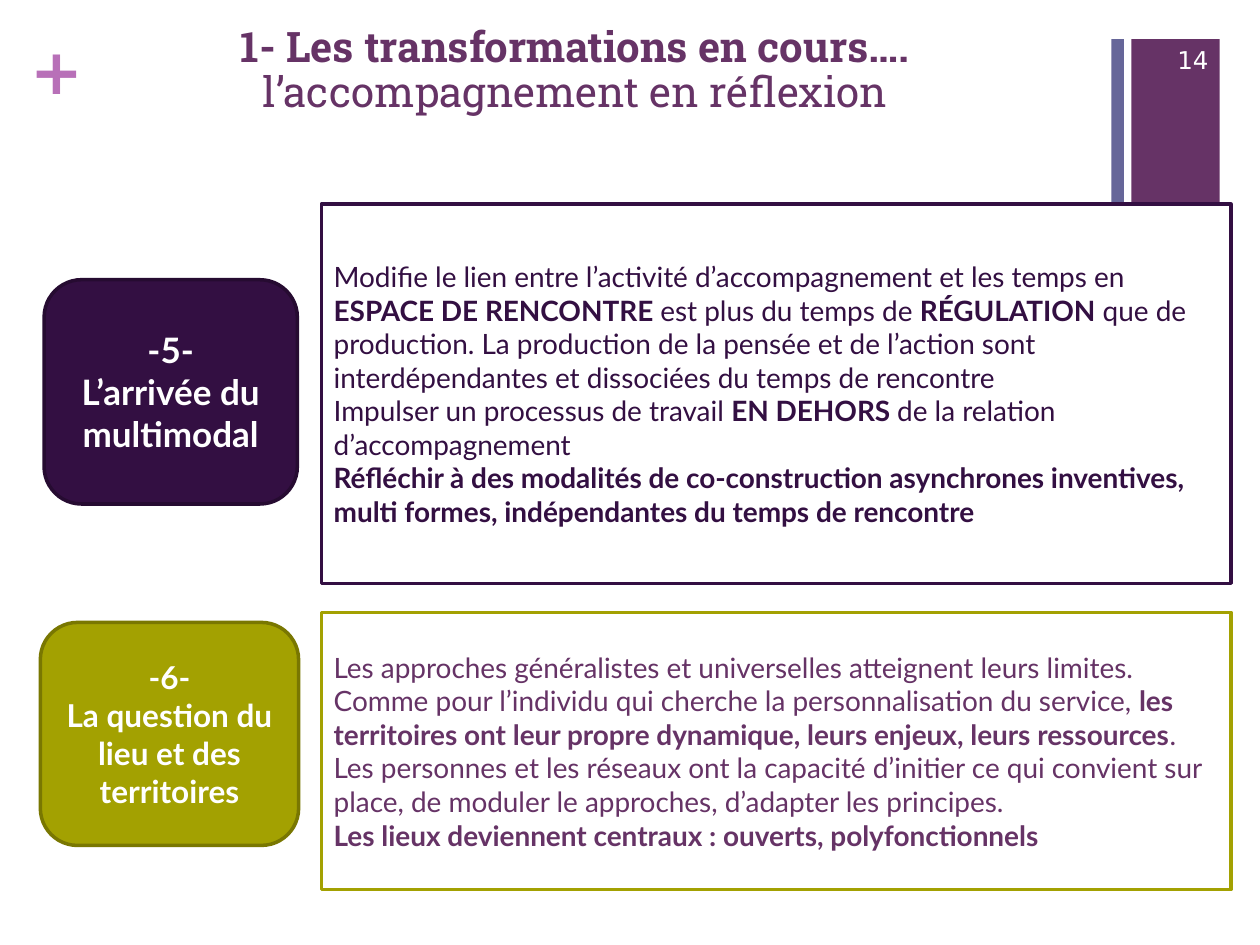
from pptx import Presentation
from pptx.dml.color import RGBColor
from pptx.enum.shapes import MSO_SHAPE
from pptx.enum.text import MSO_ANCHOR, PP_ALIGN
from pptx.util import Inches, Pt

RECTANGLE = MSO_SHAPE.RECTANGLE
ROUNDED = MSO_SHAPE.ROUNDED_RECTANGLE
TOP, MIDDLE = MSO_ANCHOR.TOP, MSO_ANCHOR.MIDDLE
LEFT, CENTER, RIGHT = PP_ALIGN.LEFT, PP_ALIGN.CENTER, PP_ALIGN.RIGHT

PURPLE, DARK_PURPLE, OLIVE = "663366", "330F42", "A3A101"
SLATE, PINK, WHITE = "666699", "B870B8", "FFFFFF"
BODY_FONT, TITLE_FONT, SYMBOL_FONT = "Lato", "Roboto Slab", "DejaVu Sans"
BREAK = "\n"

TITLE = [[("1- Les transformations en cours…. ", True),
          ("l’accompagnement en réflexion", False)]]

MULTIMODAL_LABEL = [[("-5-", True)], [("L’arrivée du multimodal", True)]]
MULTIMODAL_TEXT = [
    [("Modifie le lien entre l’activité d’accompagnement et les temps en", False)],
    [("ESPACE DE RENCONTRE ", True),
     ("est plus du temps de ", False),
     ("RÉGULATION", True),
     (" que de production. La production de la pensée et de l’action sont "
      "interdépendantes et dissociées du temps de rencontre", False),
     (BREAK, False),
     ("Impulser un processus de travail ", False),
     ("EN DEHORS ", True),
     ("de la relation d’accompagnement", False)],
    [("Réfléchir à des modalités de co-construction asynchrones inventives, "
      "multi formes, indépendantes du temps de rencontre", True)],
]

TERRITORY_LABEL = [[("-6-", True)], [("La question du lieu et des territoires", True)]]
TERRITORY_TEXT = [
    [("Les approches généralistes et universelles atteignent leurs limites. "
      "Comme pour l’individu qui cherche la personnalisation du service, ", False),
     ("les territoires ont leur propre dynamique, leurs enjeux, leurs ressources", True),
     (". Les personnes et les réseaux ont la capacité d’initier ce qui convient "
      "sur place, de moduler le approches, d’adapter les principes.", False)],
    [("Les lieux deviennent centraux : ouverts, polyfonctionnels", True)],
]


def rgb(value):
    return RGBColor.from_string(value)


def write(box, paragraphs, size, font, color, align=LEFT, anchor=MIDDLE, spacing=None):
    """Fill a box with paragraphs, each a list of (text, bold) runs."""
    frame = box.text_frame
    frame.word_wrap = True
    frame.vertical_anchor = anchor
    for index, runs in enumerate(paragraphs):
        para = frame.add_paragraph() if index else frame.paragraphs[0]
        para.alignment = align
        para.line_spacing = spacing
        for text, bold in runs:
            if text == BREAK:
                para.add_line_break()
                continue
            span = para.add_run()
            span.text = text
            span.font.size = Pt(size)
            span.font.name = font
            span.font.bold = bold
            span.font.color.rgb = rgb(color)


def add_block(page, kind, place, fill, line=None):
    block = page.shapes.add_shape(kind, *map(Inches, place))
    block.shadow.inherit = False
    block.fill.solid()
    block.fill.fore_color.rgb = rgb(fill)
    if line:
        block.line.color.rgb = rgb(line)
        block.line.width = Pt(2)
    else:
        block.line.fill.background()
    return block


def add_text(page, place, paragraphs, *style, **layout):
    box = page.shapes.add_textbox(*map(Inches, place))
    write(box, paragraphs, *style, **layout)
    return box


def add_label(page, place, fill, line, paragraphs, size):
    label = add_block(page, ROUNDED, place, fill, line)
    write(label, paragraphs, size, BODY_FONT, WHITE, CENTER)


def add_panel(page, top, height, line, paragraphs, color):
    panel = add_block(page, RECTANGLE, (2.55, top, 7.22, height), WHITE, line)
    write(panel, paragraphs, 16, BODY_FONT, color)


def add_decoration(page):
    add_block(page, RECTANGLE, (8.98, 0.31, 0.7, 1.75), PURPLE)
    add_block(page, RECTANGLE, (8.82, 0.31, 0.1, 1.75), SLATE)
    plus = add_text(page, (0.24, 0.25, 0.28, 0.61), [[("+", True)]],
                    36, SYMBOL_FONT, PINK, anchor=TOP)
    frame = plus.text_frame
    frame.margin_left = frame.margin_right = 0
    frame.margin_top = frame.margin_bottom = 0
    frame.word_wrap = False


def main():
    deck = Presentation()
    deck.slide_width, deck.slide_height = Inches(10), Inches(7.5)
    page = deck.slides.add_slide(deck.slide_layouts[6])

    add_decoration(page)
    add_text(page, (0.35, 0.16, 8.43, 1.13), TITLE, 24, TITLE_FONT, PURPLE,
             align=CENTER, anchor=TOP, spacing=0.9)
    add_label(page, (0.35, 2.22, 2.01, 1.78), DARK_PURPLE, "260B31", MULTIMODAL_LABEL, 20)
    add_panel(page, 1.62, 3.01, DARK_PURPLE, MULTIMODAL_TEXT, DARK_PURPLE)
    add_text(page, (9.08, 0.27, 0.61, 0.4), [[("14", False)]],
             14, SYMBOL_FONT, WHITE, align=RIGHT)
    add_panel(page, 4.86, 2.2, OLIVE, TERRITORY_TEXT, PURPLE)
    add_label(page, (0.32, 4.94, 2.05, 1.77), OLIVE, "797701", TERRITORY_LABEL, 18)

    deck.save("out.pptx")


if __name__ == "__main__":
    main()
